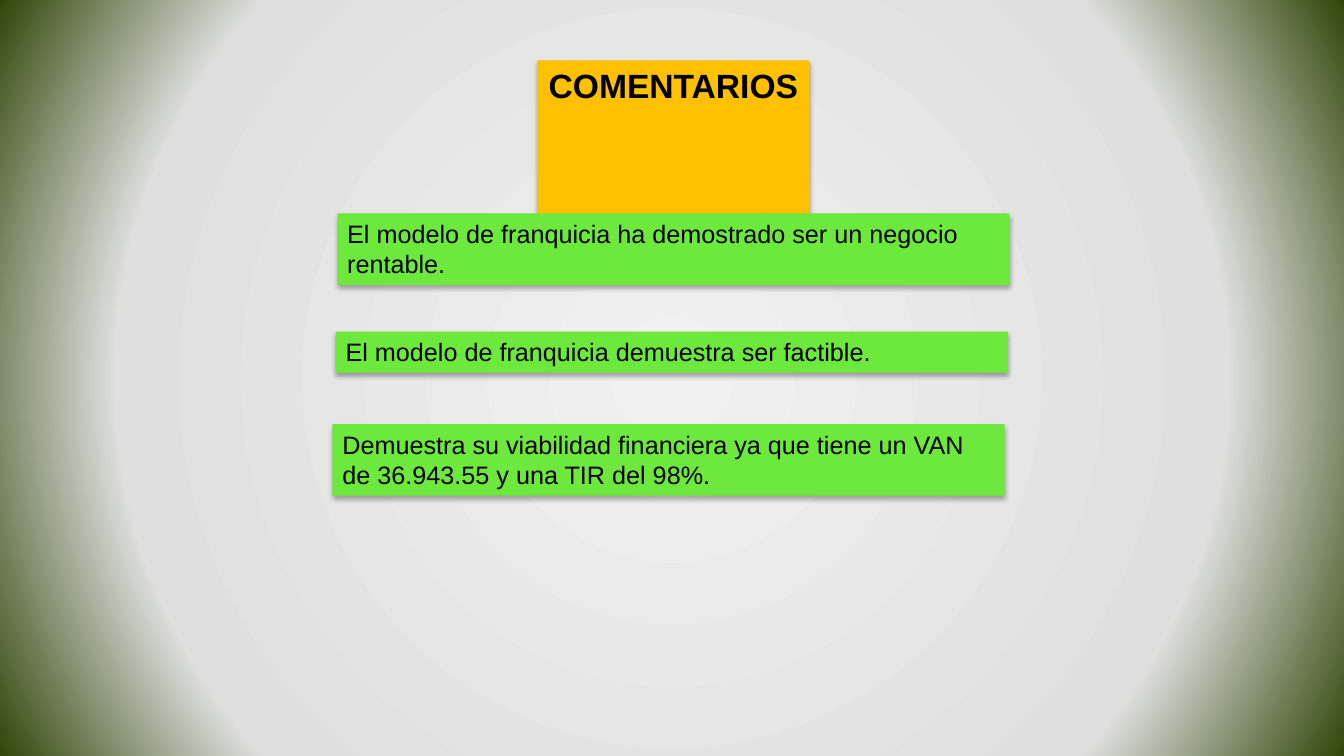
import pptx
import pptx.dml.color
import pptx.enum.text
import pptx.oxml
import pptx.oxml.ns
import pptx.util
from pptx.util import Cm

TITLE = "COMENTARIOS"
# text, left, top, height (cm)
COMMENTS = [
    ("El modelo de franquicia ha demostrado ser un negocio rentable.", 8.5, 5.38, 1.8),
    ("El modelo de franquicia demuestra ser factible.", 8.46, 8.36, 1.03),
    ("Demuestra su viabilidad financiera ya que tiene un VAN de 36.943.55 y una TIR del 98%.",
     8.38, 10.69, 1.8),
]
COMMENT_WIDTH = 16.94
COLORS = {"title": "FFC000", "comment": "6DE83C", "text": "000000", "shadow": "000000"}
BACKGROUND_STOPS = [(0, "F1F1F1"), (72, "DFDFDF"), (100, "2F4608")]
FONT = "Arial"
NAMESPACE = pptx.oxml.ns.nsdecls("a")


def paint_background(page):
    """Fill the page with a gradient running outwards from its centre."""
    page.background.fill.gradient()
    stops = "".join(
        f'<a:gs pos="{percent * 1000}"><a:srgbClr val="{color}"/></a:gs>'
        for percent, color in BACKGROUND_STOPS
    )
    gradient = pptx.oxml.parse_xml(
        f'<a:gradFill {NAMESPACE} rotWithShape="1"><a:gsLst>{stops}</a:gsLst>'
        '<a:path path="circle"><a:fillToRect l="50000" t="50000" r="50000" b="50000"/>'
        "</a:path></a:gradFill>"
    )
    default = next(page.element.iter(pptx.oxml.ns.qn("a:gradFill")))
    default.getparent().replace(default, gradient)


def add_shadow(box):
    box.element.spPr.append(pptx.oxml.parse_xml(
        f'<a:effectLst {NAMESPACE}><a:outerShdw blurRad="{pptx.util.Pt(3.5)}" '
        f'dist="{pptx.util.Pt(2.2)}" dir="5400000" rotWithShape="0">'
        f'<a:srgbClr val="{COLORS["shadow"]}"><a:alpha val="32000"/></a:srgbClr>'
        "</a:outerShdw></a:effectLst>"
    ))


def format_box(box, text, fill, size, bold, wrap, align):
    box.fill.solid()
    box.fill.fore_color.rgb = pptx.dml.color.RGBColor.from_string(COLORS[fill])
    add_shadow(box)
    frame = box.text_frame
    frame.text = text
    frame.word_wrap = wrap
    frame.auto_size = pptx.enum.text.MSO_AUTO_SIZE.SHAPE_TO_FIT_TEXT
    frame.vertical_anchor = pptx.enum.text.MSO_ANCHOR.TOP
    para = frame.paragraphs[0]
    para.alignment = align
    font = para.runs[0].font
    font.name = FONT
    font.size = pptx.util.Pt(size)
    font.bold = bold
    font.color.rgb = pptx.dml.color.RGBColor.from_string(COLORS["text"])


def main():
    deck = pptx.Presentation()
    deck.slide_width, deck.slide_height = Cm(33.87), Cm(19.05)
    page = deck.slides.add_slide(deck.slide_layouts.get_by_name("Title Only"))
    paint_background(page)

    align = pptx.enum.text.PP_ALIGN
    title = page.shapes.title
    title.left, title.top, title.width, title.height = Cm(13.54), Cm(1.52), Cm(6.86), Cm(1.28)
    format_box(title, TITLE, "title", 24, True, False, align.CENTER)

    for text, left, top, height in COMMENTS:
        box = page.shapes.add_textbox(Cm(left), Cm(top), Cm(COMMENT_WIDTH), Cm(height))
        format_box(box, text, "comment", 18, False, True, align.LEFT)

    deck.save("out.pptx")


if __name__ == "__main__":
    main()
